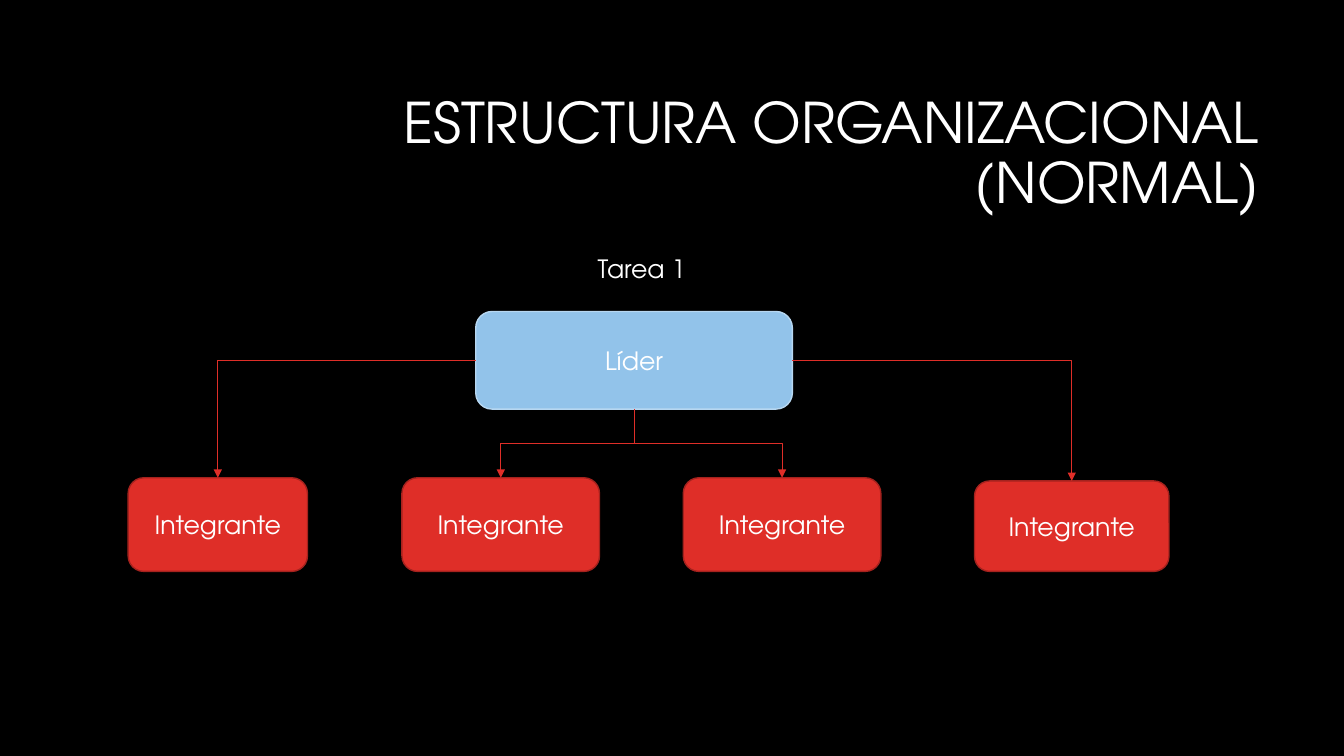
from pptx import Presentation
from pptx.dml.color import RGBColor
from pptx.enum.shapes import MSO_CONNECTOR, MSO_SHAPE
from pptx.enum.text import MSO_ANCHOR, PP_ALIGN
from pptx.oxml.ns import qn
from pptx.util import Cm, Pt
from lxml.etree import SubElement

RED = "DF2E28"


def color(code):
    return RGBColor.from_string(code)


def write(text, left, top, width, height, fill=None, edge=None, size=18,
          align=PP_ALIGN.CENTER, anchor=MSO_ANCHOR.MIDDLE, spacing=1.0):
    """Add text in a rounded box if fill is given, else in a plain text box."""
    place = Cm(left), Cm(top), Cm(width), Cm(height)
    if fill:
        box = slide.shapes.add_shape(MSO_SHAPE.ROUNDED_RECTANGLE, *place)
        box.shadow.inherit = False
        box.fill.solid()
        box.fill.fore_color.rgb = color(fill)
        box.line.color.rgb = color(edge)
        box.line.width = Pt(1)
    else:
        box = slide.shapes.add_textbox(*place)
    frame = box.text_frame
    frame.word_wrap = True
    frame.vertical_anchor = anchor
    para = frame.paragraphs[0]
    para.alignment = align
    para.line_spacing = spacing
    run = para.add_run()
    run.text = text
    run.font.name = "TeX Gyre Adventor"
    run.font.size = Pt(size)
    run.font.color.rgb = color("FFFFFF")
    return box


deck = Presentation()
deck.slide_width, deck.slide_height = Cm(33.87), Cm(19.05)
slide = deck.slides.add_slide(deck.slide_layouts[6])
slide.background.fill.solid()
slide.background.fill.fore_color.rgb = color("000000")

write("ESTRUCTURA ORGANIZACIONAL (NORMAL)", 8.05, 2.13, 23.93, 3.58,
      size=40, align=PP_ALIGN.RIGHT, spacing=0.9)
write("Tarea 1", 14.81, 6.25, 5.18, 1.02,
      align=PP_ALIGN.LEFT, anchor=MSO_ANCHOR.TOP)
leader = write("Líder", 11.99, 7.85, 7.98, 2.46, fill="92C3EA", edge="B7D7F1")

# Connection sites of a box: 0 top, 1 left, 2 bottom, 3 right
members = [
    (3.23, 12.04, 4.52, 2.36, 1),
    (10.13, 12.04, 4.98, 2.36, 2),
    (17.22, 12.04, 4.98, 2.36, 2),
    (24.56, 12.12, 4.9, 2.28, 3),
]
for *place, site in members:
    member = write("Integrante", *place, fill=RED, edge="A5221E")
    link = slide.shapes.add_connector(MSO_CONNECTOR.ELBOW, 0, 0, 0, 0)
    link.begin_connect(leader, site)
    link.end_connect(member, 0)
    link.line.color.rgb = color(RED)
    link.line.width = Pt(0.75)
    props = link._element.spPr
    SubElement(link.line._get_or_add_ln(), qn("a:tailEnd"), type="triangle")
    SubElement(props, qn("a:effectLst"))
    if site == 2:
        # Turn the elbow so that it leaves the leader downwards
        right = link.end_x > link.begin_x
        mid_x = link.left + link.width // 2
        mid_y = link.top + link.height // 2
        link.width, link.height = link.height, link.width
        link.left = mid_x - link.width // 2
        link.top = mid_y - link.height // 2
        frame = props.find(qn("a:xfrm"))
        frame.set("rot", str((270 if right else 90) * 60000))
        frame.set("flipH", "1" if right else "0")
    else:
        props.find(qn("a:prstGeom")).set("prst", "bentConnector2")

deck.save("out.pptx")
